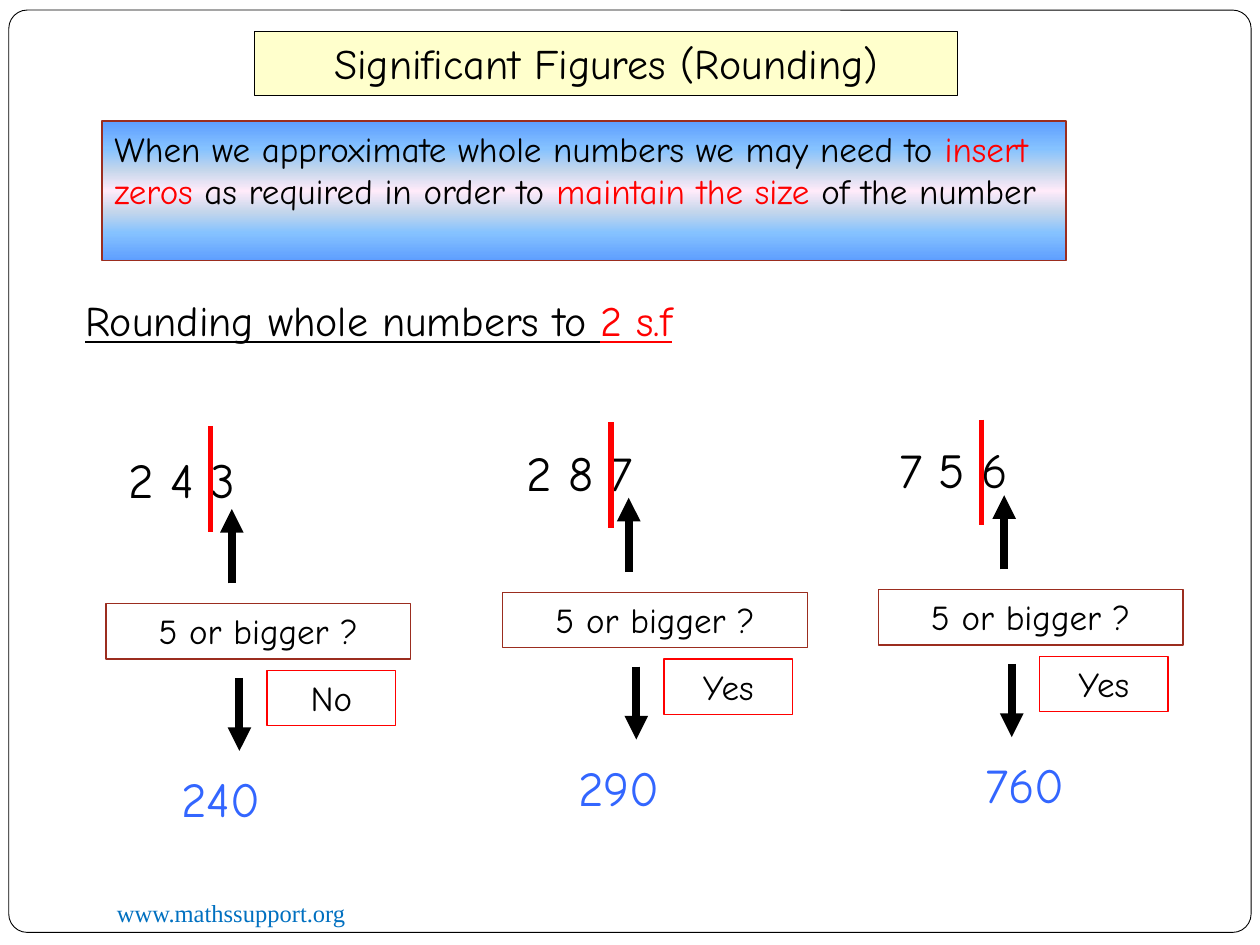
from dataclasses import dataclass

from lxml.etree import SubElement
from pptx import Presentation
from pptx.dml.color import RGBColor
from pptx.enum.shapes import MSO_CONNECTOR as Connector, MSO_SHAPE as Preset
from pptx.enum.text import MSO_ANCHOR as Anchor, MSO_AUTO_SIZE as AutoSize, PP_ALIGN as Align
from pptx.oxml.ns import qn
from pptx.util import Emu, Pt

PX = 9144  # 100 px to the inch


@dataclass(frozen=True)
class Theme:
    font: str = "Comic Neue"
    footer_font: str = "Times New Roman"
    black: str = "000000"
    white: str = "FFFFFF"
    red: str = "FF0000"
    brown: str = "9B2D1F"
    answer: str = "3366FF"
    link: str = "0070C0"
    title_fill: str = "FFFFCC"
    gradient: tuple = ((0, "5E9EFF"), (20, "85C2FF"), (35, "C4D6EB"), (50, "FFEBFA"),
                       (65, "C4D6EB"), (80, "85C2FF"), (100, "5E9EFF"))
    number_size: int = 28
    heading_size: int = 24
    body_size: int = 20
    footer_size: int = 14


@dataclass(frozen=True)
class Example:
    left: int
    top: int
    number: str
    number_at: tuple
    cut_at: tuple
    verdict: str
    answer: str
    answer_indent: int


THEME = Theme()
EXAMPLES = (
    Example(84, 479, "2 4 3", (92, 352), (167, 338), "No", "240", 13),
    Example(399, 470, "2 8 7", (408, 346), (485, 335), "Yes", "290", 13),
    Example(697, 468, "7 5 6", (704, 344), (779, 333), "Yes", "760", 38),
)


def px(*lengths):
    return [Emu(length * PX) for length in lengths]


def rgb(value):
    return RGBColor.from_string(value)


def write(shape, spans, size, font=THEME.font, align=Align.LEFT, underline=None, indent=0):
    """Fill a shape with one paragraph made of (text, colour) spans."""
    frame = shape.text_frame
    frame.word_wrap = True
    frame.auto_size = AutoSize.NONE
    frame.vertical_anchor = Anchor.TOP
    frame.margin_left, frame.margin_right = px(10 + indent, 10)
    frame.margin_top, frame.margin_bottom = px(5, 5)
    para = frame.paragraphs[0]
    para.alignment = align
    para.font.name = font
    para.font.size = Pt(size)
    para.font.bold = False
    para.font.underline = underline
    if len(spans) == 1:
        para.font.color.rgb = rgb(spans[0][1])
    for text, color in spans:
        span = para.add_run()
        span.text = text
        if len(spans) > 1:
            span.font.color.rgb = rgb(color)


def add_label(page, at, spans, size, **style):
    write(page.shapes.add_textbox(*px(*at)), spans, size, **style)


def outline(shape, color, width=0.75):
    shape.line.color.rgb = rgb(color)
    shape.line.width = Pt(width)


def add_box(page, at, line, preset=Preset.RECTANGLE):
    box = page.shapes.add_shape(preset, *px(*at))
    box.shadow.inherit = False
    box.fill.background()
    outline(box, line)
    return box


def add_line(page, start, end, color, width, arrow=False):
    line = page.shapes.add_connector(Connector.STRAIGHT, *px(*start, *end))
    outline(line, color, width)
    if arrow:
        SubElement(line.line._get_or_add_ln(), qn("a:tailEnd"), type="triangle")
    SubElement(line._element.spPr, qn("a:effectLst"))


def fill_gradient(shape, stops):
    shape.fill.gradient()
    shape.fill.gradient_angle = 90
    stop_list = shape._element.spPr.find(".//" + qn("a:gsLst"))
    for old_stop in list(stop_list):
        stop_list.remove(old_stop)
    for percent, color in stops:
        stop = SubElement(stop_list, qn("a:gs"), pos=str(percent * 1000))
        SubElement(stop, qn("a:srgbClr"), val=color)


def add_title(page):
    title = page.shapes.title
    title.left, title.top, title.width, title.height = px(202, 25, 558, 51)
    title.fill.solid()
    title.fill.fore_color.rgb = rgb(THEME.title_fill)
    outline(title, THEME.black)
    write(title, [("Significant Figures (Rounding)", THEME.black)],
          THEME.heading_size, align=Align.CENTER)


def add_page_frame(page):
    """Draw the rounded border behind everything else."""
    border = add_box(page, (7, 8, 986, 732), THEME.black, Preset.ROUNDED_RECTANGLE)
    border.adjustments[0] = 0.02
    border.fill.solid()
    border.fill.fore_color.rgb = rgb(THEME.white)
    border.line.width = Pt(0.5)
    page.shapes.title._element.addprevious(border._element)


def add_rule(page):
    rule = add_box(page, (81, 96, 765, 111), THEME.brown)
    fill_gradient(rule, THEME.gradient)
    write(rule, [
        ("When we approximate whole numbers we may need to ", THEME.black),
        ("insert zeros", THEME.red),
        (" as required in order to ", THEME.black),
        ("maintain the size", THEME.red),
        (" of the number", THEME.black),
    ], THEME.body_size)


def add_example(page, example):
    left, top = example.left, example.top
    cut_x, cut_y = example.cut_at
    add_label(page, (*example.number_at, 242, 57),
              [(example.number, THEME.black)], THEME.number_size)
    add_line(page, (cut_x, cut_y), (cut_x, cut_y + 84), THEME.red, 3)

    boxes = (
        ((left, top, 242, 44), THEME.brown, "5 or bigger ?"),
        ((left + 128, top + 53, 102, 44), THEME.red, example.verdict),
    )
    for at, line, text in boxes:
        write(add_box(page, at, line), [(text, THEME.black)],
              THEME.body_size, align=Align.CENTER)

    for x, start, end in ((100, -16, -75), (106, 59, 117)):
        add_line(page, (left + x, top + start), (left + x, top + end),
                 THEME.black, 4.5, arrow=True)
    add_label(page, (left + 37, top + 126, 210, 57), [(example.answer, THEME.answer)],
              THEME.number_size, indent=example.answer_indent)


def main():
    deck = Presentation()
    deck.slide_width, deck.slide_height = px(1000, 750)
    page = deck.slides.add_slide(deck.slide_layouts[5])
    add_title(page)
    add_page_frame(page)
    add_label(page, (83, 708, 325, 34), [("www.mathssupport.org", THEME.link)],
              THEME.footer_size, font=THEME.footer_font)
    add_rule(page)
    add_label(page, (58, 229, 552, 50),
              [("Rounding whole numbers to ", THEME.black), ("2 s.f", THEME.red)],
              THEME.heading_size, underline=True)
    for example in EXAMPLES:
        add_example(page, example)
    deck.save("out.pptx")


if __name__ == "__main__":
    main()
